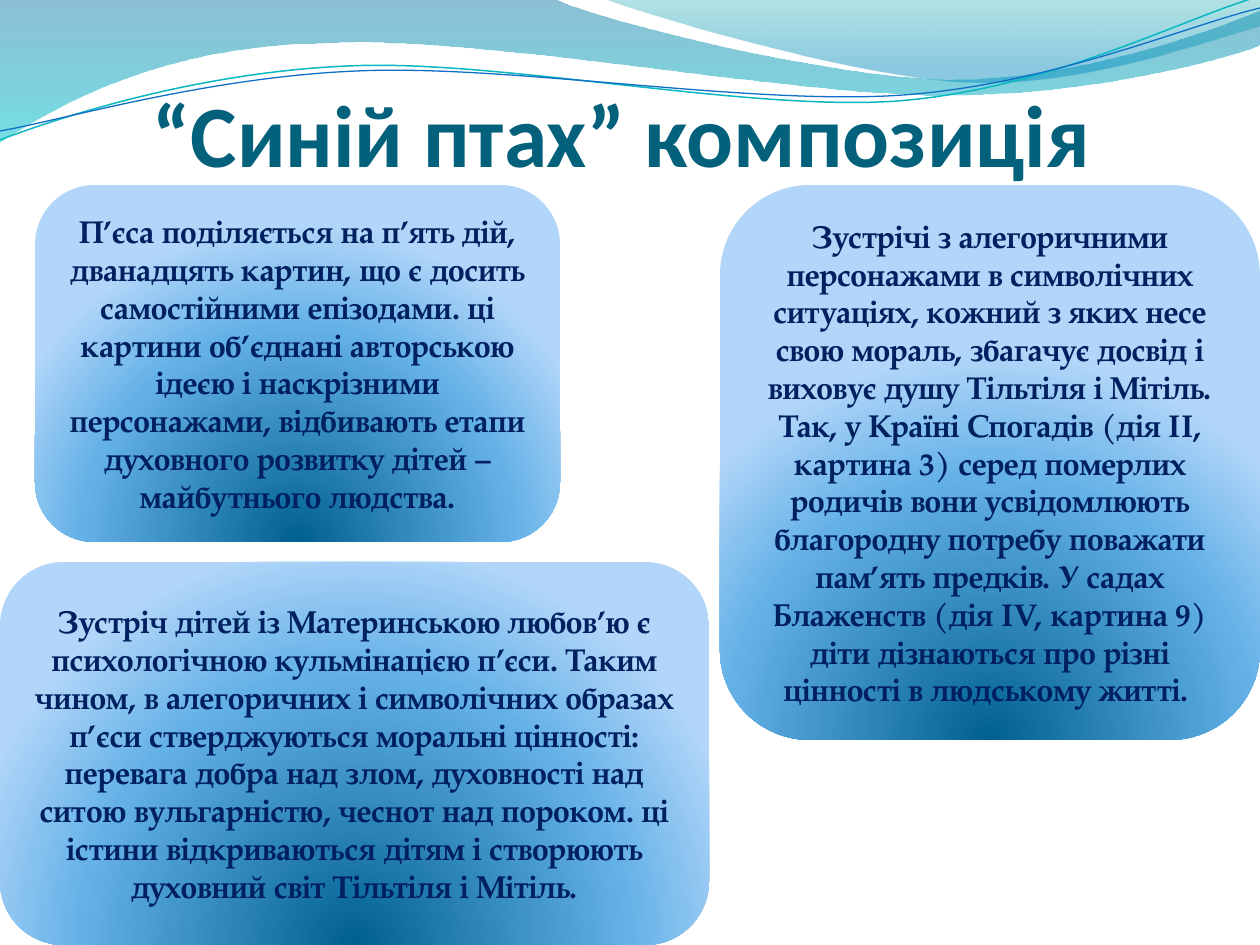
import math

from lxml import etree
from pptx import Presentation
from pptx.dml.color import RGBColor
from pptx.enum.shapes import MSO_SHAPE
from pptx.enum.text import MSO_ANCHOR, PP_ALIGN
from pptx.oxml import parse_xml
from pptx.oxml.ns import nsdecls, qn
from pptx.util import Emu, Pt

ROUNDED = MSO_SHAPE.ROUNDED_RECTANGLE
CENTER = PP_ALIGN.CENTER
MIDDLE, BOTTOM = MSO_ANCHOR.MIDDLE, MSO_ANCHOR.BOTTOM

PX_PER_INCH = 126
PAGE_BOX = (0, 0, 1260, 945)
WAVE_TILT = -2.7
WAVE_CENTER = (629, 72)

TITLE_TEAL = RGBColor(0x04, 0x61, 0x7B)
NAVY = RGBColor(0x00, 0x20, 0x60)
LINE_TEAL = RGBColor(0x0A, 0xB8, 0xBF)
LINE_BLUE = RGBColor(0x0F, 0x6F, 0xC6)

# Gradient stops: position %, colour, opacity %
BAND_STOPS = [(0, RGBColor(0x00, 0x74, 0xA1), 45), (100, RGBColor(0x00, 0xC6, 0xCF), 55)]
CORNER_STOPS = [(0, RGBColor(0x00, 0xA1, 0xA9), 30), (80, RGBColor(0x00, 0x8B, 0xBF), 45)]
CARD_STOPS = [(0, RGBColor(0x00, 0x60, 0x91), 100), (68, RGBColor(0x64, 0xB1, 0xE7), 100),
              (100, RGBColor(0xB1, 0xD6, 0xF9), 100)]
DOWNWARD = '<a:lin ang="5400000" scaled="0"/>'
FROM_BELOW = ('<a:path path="circle"><a:fillToRect l="50000" t="130000" '
              'r="50000" b="-30000"/></a:path>')

# Wave outlines: a start point, then lines (1 point) or cubic curves (3 points)
BAND = [[(0, 0)], [(554, -1)], [(600, 21), (837, 79), (955, 79)],
        [(1075, 79), (1207, 33), (1260, 11)], [(1261, 45)],
        [(1239, 55), (1096, 96), (940, 95)], [(784, 95), (481, 35), (324, 43)],
        [(163, 45), (58, 105), (-1, 142)], [(0, 0)]]
CORNER = [[(604, -1)], [(641, 14), (859, 78), (969, 82)],
          [(1079, 87), (1211, 40), (1260, 26)], [(1260, 0)], [(604, -1)]]
TEAL_WAVE = [[(0, 140)], [(60, 117), (199, 72), (349, 66)],
             [(498, 59), (747, 112), (898, 101)], [(1050, 89), (1182, 19), (1257, -3)]]
BLUE_WAVE = [[(0, 131)], [(59, 121), (207, 77), (357, 71)],
             [(508, 64), (752, 106), (903, 95)], [(1053, 84), (1185, 26), (1260, 8)]]

TITLE_FONT = {"name": "Calibri", "size": Pt(50), "bold": True}
CARD_FONT = {"name": "TeX Gyre Pagella", "size": Pt(18), "bold": True}

CARDS = [
    ((35, 185, 525, 357),
     "П’єса поділяється на п’ять дій, дванадцять картин, що є досить самостійними "
     "епізодами. ці картини об’єднані авторською ідеєю і наскрізними персонажами, "
     "відбивають етапи духовного розвитку дітей – майбутнього людства."),
    ((0, 562, 709, 383),
     "Зустріч дітей із Материнською любов’ю є психологічною кульмінацією п’єси. Таким "
     "чином, в алегоричних і символічних образах п’єси стверджуються моральні цінності: "
     "перевага добра над злом, духовності над ситою вульгарністю, чеснот над пороком. ці "
     "істини відкриваються дітям і створюють духовний світ Тільтіля і Мітіль."),
    ((720, 185, 540, 555),
     "Зустрічі з алегоричними персонажами в символічних ситуаціях, кожний з яких несе "
     "свою мораль, збагачує досвід і виховує душу Тільтіля і Мітіль. Так, у Країні "
     "Спогадів (дія II, картина 3) серед померлих родичів вони усвідомлюють благородну "
     "потребу поважати пам’ять предків. У садах Блаженств (дія IV, картина 9) діти "
     "дізнаються про різні цінності в людському житті. "),
]


def px(length):
    return Emu(round(length * 914400 / PX_PER_INCH))


def fill_gradient(shape, stops, direction):
    shape.fill.background()
    stop_xml = "".join(
        f'<a:gs pos="{pos * 1000}"><a:srgbClr val="{color}">'
        f'<a:alpha val="{opacity * 1000}"/></a:srgbClr></a:gs>'
        for pos, color, opacity in stops)
    gradient = parse_xml(f'<a:gradFill {nsdecls("a")} rotWithShape="1">'
                         f'<a:gsLst>{stop_xml}</a:gsLst>{direction}</a:gradFill>')
    properties = shape.element.spPr
    properties.replace(properties.find(qn("a:noFill")), gradient)


def level(point):
    """Turn a point of a tilted wave back to where it lies before the tilt."""
    angle = math.radians(-WAVE_TILT)
    dx, dy = point[0] - WAVE_CENTER[0], point[1] - WAVE_CENTER[1]
    return (WAVE_CENTER[0] + dx * math.cos(angle) - dy * math.sin(angle),
            WAVE_CENTER[1] + dx * math.sin(angle) + dy * math.cos(angle))


def add_outline(page, box, outline, close):
    left, top = box[:2]
    segments = [[(px(left + x), px(top + y)) for x, y in segment] for segment in outline]
    builder = page.shapes.build_freeform(*segments[0][0])
    builder.add_line_segments([segment[-1] for segment in segments[1:]], close=close)
    shape = builder.convert_to_shape()
    shape.shadow.inherit = False
    # Bend the lines that have control points
    lines = list(shape.element.iter(qn("a:lnTo")))
    for line, segment in zip(lines, segments[1:]):
        if len(segment) == 3:
            curve = etree.Element(qn("a:cubicBezTo"))
            for x, y in segment:
                etree.SubElement(curve, qn("a:pt"), x=str(x - shape.left), y=str(y - shape.top))
            line.getparent().replace(line, curve)
    return shape


def add_waves(page, box):
    for outline, stops in ((BAND, BAND_STOPS), (CORNER, CORNER_STOPS)):
        shape = add_outline(page, box, outline, True)
        fill_gradient(shape, stops, DOWNWARD)
        shape.line.fill.background()
    for outline, color, width in ((TEAL_WAVE, LINE_TEAL, 0.85), (BLUE_WAVE, LINE_BLUE, 0.75)):
        flat = [[level(point) for point in segment] for segment in outline]
        shape = add_outline(page, box, flat, False)
        shape.rotation = WAVE_TILT
        shape.fill.background()
        shape.line.color.rgb = color
        shape.line.width = Pt(width)


def write_text(shape, text, font, color, frame_format):
    for name, value in frame_format.items():
        setattr(shape.text_frame, name, value)
    para = shape.text_frame.paragraphs[0]
    para.alignment = CENTER
    span = para.add_run()
    span.text = text
    for name, value in font.items():
        setattr(span.font, name, value)
    span.font.color.rgb = color


def add_title(page, box, text):
    title = page.shapes.add_textbox(*map(px, box))
    write_text(title, text, TITLE_FONT, TITLE_TEAL,
               {"word_wrap": True, "vertical_anchor": BOTTOM, "margin_left": 0,
                "margin_top": px(6), "margin_right": 0, "margin_bottom": 0})


def add_card(page, box, text):
    card = page.shapes.add_shape(ROUNDED, *map(px, box))
    card.shadow.inherit = False
    fill_gradient(card, CARD_STOPS, FROM_BELOW)
    card.line.fill.background()
    write_text(card, text, CARD_FONT, NAVY, {"word_wrap": True, "vertical_anchor": MIDDLE})


def main():
    deck = Presentation()
    deck.slide_width, deck.slide_height = map(px, PAGE_BOX[2:])
    page = deck.slides.add_slide(deck.slide_layouts[6])
    add_waves(page, PAGE_BOX)
    add_title(page, (55, 26, 1134, 159), "“Синій птах” композиція")
    for box, text in CARDS:
        add_card(page, box, text)
    deck.save("out.pptx")


if __name__ == "__main__":
    main()
